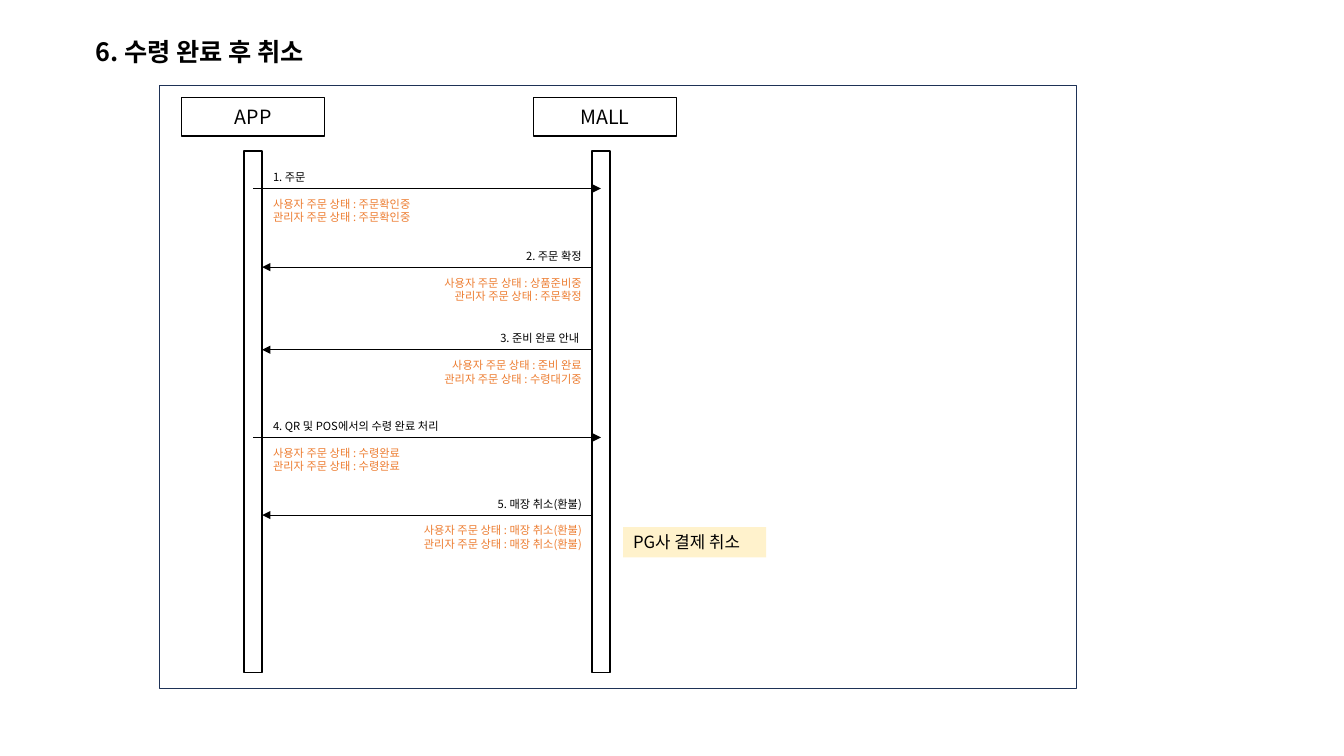
"""Draw the sequence diagram for cancelling an order after pickup."""
from dataclasses import dataclass

from pptx import Presentation, util as u
from pptx.dml.color import RGBColor
from pptx.enum import shapes, text
from pptx.oxml.ns import qn

BLACK = RGBColor(0x00, 0x00, 0x00)
NAVY = RGBColor(0x1E, 0x32, 0x56)
ORANGE = RGBColor(0xED, 0x7D, 0x31)
CREAM = RGBColor(0xFF, 0xF2, 0xCC)
FONT = "Noto Sans CJK KR"
CELL = u.Inches(0.1)
LEADING = 1.2
LEFT, CENTER, RIGHT = text.PP_ALIGN.LEFT, text.PP_ALIGN.CENTER, text.PP_ALIGN.RIGHT
TOP, MIDDLE = text.MSO_ANCHOR.TOP, text.MSO_ANCHOR.MIDDLE


@dataclass(frozen=True)
class Area:
    column: float
    row: float
    columns: float
    rows: float

    def lengths(self) -> list:
        return [cells(n) for n in (self.column, self.row, self.columns, self.rows)]


@dataclass(frozen=True)
class Line:
    wording: str
    size: float
    color: RGBColor = BLACK
    bold: bool = False
    lines_before: int = 0


@dataclass(frozen=True)
class Actor:
    name: str
    head_column: float
    bar_column: float


@dataclass(frozen=True)
class Message:
    row: float
    label: str
    user_state: str
    admin_state: str
    to_mall: bool


BAR_WIDTH = 1.8
APP = Actor("APP", 18, 24.2)
MALL = Actor("MALL", 52.9, 58.7)
MESSAGES = [
    Message(18.7, "1. 주문", "주문확인중", "주문확인중", True),
    Message(26.5, "2. 주문 확정", "상품준비중", "주문확정", False),
    Message(34.7, "3. 준비 완료 안내 ", "준비 완료", "수령대기중", False),
    Message(43.4, "4. QR 및 POS에서의 수령 완료 처리", "수령완료", "수령완료", True),
    Message(51.1, "5. 매장 취소(환불)", "매장 취소(환불)", "매장 취소(환불)", False),
]


def cells(count: float) -> int:
    return round(count * CELL)


def apply(target, values: dict) -> None:
    for name, value in values.items():
        setattr(target, name, value)


def write(box, lines: list, align=LEFT, anchor=TOP) -> None:
    frame = box.text_frame
    apply(frame, {"word_wrap": True, "vertical_anchor": anchor})
    for index, line in enumerate(lines):
        para = frame.add_paragraph() if index else frame.paragraphs[0]
        pitch = line.size * LEADING
        apply(para, {"alignment": align, "line_spacing": u.Pt(pitch),
                     "space_before": u.Pt(pitch * line.lines_before)})
        span = para.add_run()
        span.text = line.wording
        apply(span.font, {"name": FONT, "size": u.Pt(line.size), "bold": line.bold})
        span.font.color.rgb = line.color
        east_asian = span.font._element.makeelement(qn("a:ea"), {"typeface": FONT})
        span.font._element.append(east_asian)


def add_box(page, area: Area, outline=None, fill=None):
    box = page.shapes.add_shape(shapes.MSO_SHAPE.RECTANGLE, *area.lengths())
    box.shadow.inherit = False
    if fill is None:
        box.fill.background()
    else:
        box.fill.solid()
        box.fill.fore_color.rgb = fill
    if outline is None:
        box.line.fill.background()
    else:
        box.line.color.rgb = outline
        box.line.width = u.Pt(1)
    return box


def add_label(page, area: Area, lines: list, align=LEFT) -> None:
    write(page.shapes.add_textbox(*area.lengths()), lines, align)


def add_arrow(page, start: float, end: float, row: float) -> None:
    arrow = page.shapes.add_connector(
        shapes.MSO_CONNECTOR.STRAIGHT, cells(start), cells(row), cells(end), cells(row))
    arrow.line.color.rgb = BLACK
    arrow.line.width = u.Pt(0.5)
    outline = arrow.line._get_or_add_ln()
    outline.append(outline.makeelement(qn("a:tailEnd"), {"type": "triangle"}))
    properties = arrow._element.spPr
    properties.append(properties.makeelement(qn("a:effectLst"), {}))


def add_actor(page, actor: Actor) -> None:
    head = add_box(page, Area(actor.head_column, 9.7, 14.2, 3.8), BLACK)
    write(head, [Line(actor.name, 14)], CENTER, MIDDLE)
    add_box(page, Area(actor.bar_column, 15, BAR_WIDTH, 51.7), BLACK)


def add_message(page, message: Message) -> None:
    app_edge = APP.bar_column + BAR_WIDTH
    if message.to_mall:
        start, end = (actor.bar_column + BAR_WIDTH / 2 for actor in (APP, MALL))
    else:
        start, end = MALL.bar_column, app_edge
    add_arrow(page, start, end, message.row)
    lines = [
        Line(message.label, 8),
        Line(f"사용자 주문 상태 : {message.user_state}", 8, ORANGE, lines_before=1),
        Line(f"관리자 주문 상태 : {message.admin_state}", 8, ORANGE),
    ]
    area = Area(app_edge + 0.1, message.row - 2.3, MALL.bar_column - app_edge - 0.1, 6.4)
    add_label(page, area, lines, LEFT if message.to_mall else RIGHT)


def main() -> None:
    deck = Presentation()
    apply(deck, {"slide_width": u.Inches(13.33), "slide_height": u.Inches(7.5)})
    page = deck.slides.add_slide(deck.slide_layouts[6])
    add_box(page, Area(15.8, 8.5, 91, 59.8), NAVY)
    for actor in (APP, MALL):
        add_actor(page, actor)
    add_label(page, Area(8.5, 3.1, 32.8, 4), [Line("6. 수령 완료 후 취소", 18, bold=True)])
    note = add_box(page, Area(61.8, 52.3, 14.2, 3), fill=CREAM)
    write(note, [Line("PG사 결제 취소", 12)])
    for message in MESSAGES:
        add_message(page, message)
    deck.save("out.pptx")


if __name__ == "__main__":
    main()
